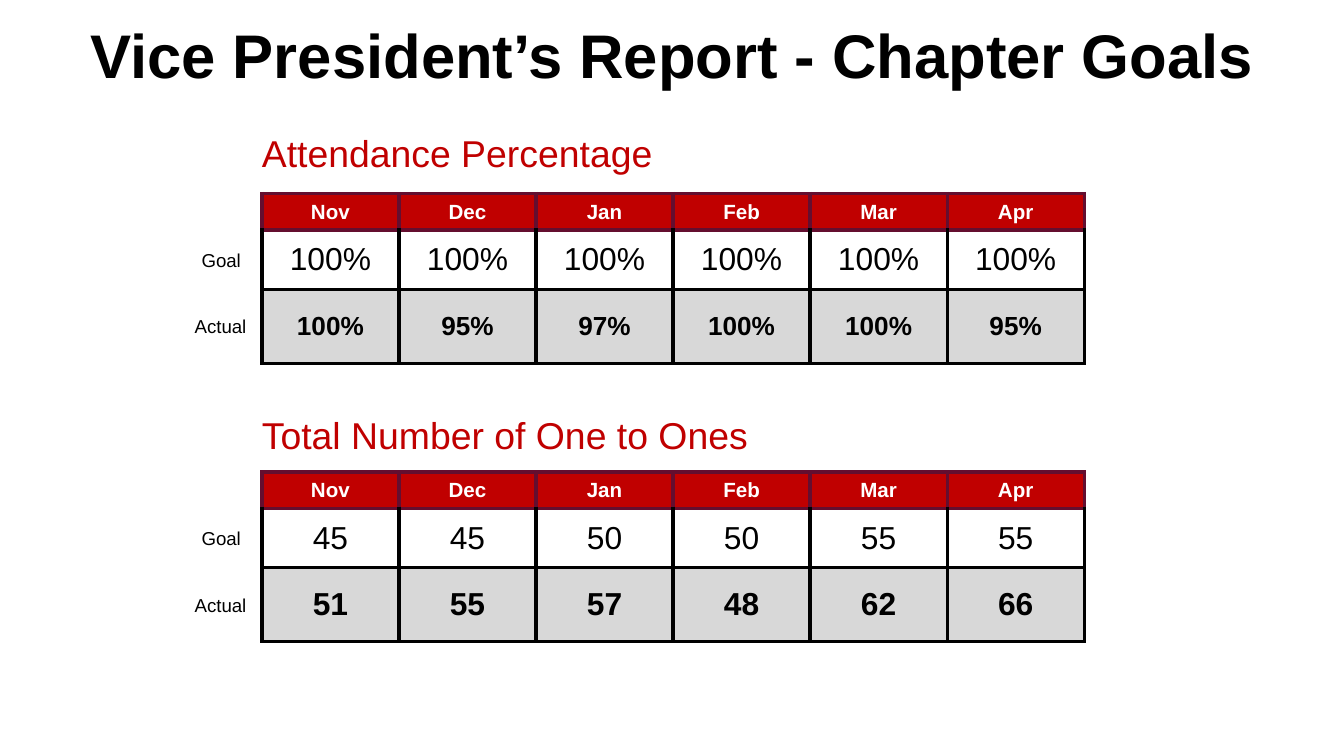
from dataclasses import dataclass

from lxml import etree
from pptx import Presentation
from pptx.dml.color import RGBColor
from pptx.enum.text import MSO_ANCHOR, MSO_AUTO_SIZE, PP_ALIGN
from pptx.oxml.ns import qn
from pptx.util import Cm, Pt

MIDDLE = MSO_ANCHOR.MIDDLE
NO_FIT = MSO_AUTO_SIZE.NONE
LEFT = PP_ALIGN.LEFT
CENTER = PP_ALIGN.CENTER
SIDES = ("left", "top", "right", "bottom")


@dataclass(frozen=True)
class Theme:
    font: str = "Arial"
    black: str = "000000"
    white: str = "FFFFFF"
    red: str = "C00000"
    wine: str = "640E2F"
    gray: str = "D8D8D8"
    title: int = 33
    heading: int = 20
    goal: int = 17
    header: int = 11
    label: int = 10
    border: int = 2


THEME = Theme()
TABLE_LEFT = 4.95
COLUMN_WIDTH = 2.59
ROW_HEIGHTS = (0.69, 1.12, 1.4)
LABEL_RIGHT = 4.7
LABEL_HEIGHT = 0.41
LABELS = (("Goal", 0.89), ("Actual", 1.02))
MONTHS = ("Nov", "Dec", "Jan", "Feb", "Mar", "Apr")

SECTIONS = (
    {
        "heading": "Attendance Percentage",
        "heading_top": 2.46,
        "table_top": 3.66,
        "goals": ("100%",) * 6,
        "actuals": ("100%", "95%", "97%", "100%", "100%", "95%"),
        "actual_size": 14,
    },
    {
        "heading": "Total Number of One to Ones",
        "heading_top": 7.78,
        "table_top": 8.92,
        "goals": ("45", "45", "50", "50", "55", "55"),
        "actuals": ("51", "55", "57", "48", "62", "66"),
        "actual_size": 17,
    },
)


def apply(target, values):
    for name, value in values.items():
        setattr(target, name, value)


class GoalsPage:
    def __init__(self, page, theme):
        self.page = page
        self.theme = theme

    def add_span(self, frame, text, size, color, bold=False, align=LEFT):
        para = frame.paragraphs[0]
        para.alignment = align
        span = para.add_run()
        span.text = text
        apply(span.font, {"name": self.theme.font, "size": Pt(size), "bold": bold})
        span.font.color.rgb = RGBColor.from_string(color)
        return para

    def format_frame(self, frame, inset_x=0, inset_y=0):
        apply(frame, {
            "word_wrap": True,
            "auto_size": NO_FIT,
            "vertical_anchor": MIDDLE,
            "margin_left": Cm(inset_x),
            "margin_right": Cm(inset_x),
            "margin_top": Cm(inset_y),
            "margin_bottom": Cm(inset_y),
        })

    def title(self, text):
        box = self.page.shapes.title
        apply(box, {"left": Cm(1.07), "top": Cm(0), "width": Cm(23.27), "height": Cm(2.21)})
        self.format_frame(box.text_frame, 0.18, 0.1)
        para = self.add_span(box.text_frame, text, self.theme.title, self.theme.black, True, CENTER)
        para.line_spacing = 0.9

    def text(self, text, left, top, width, height, size, color):
        box = self.page.shapes.add_textbox(Cm(left), Cm(top), Cm(width), Cm(height))
        self.format_frame(box.text_frame)
        self.add_span(box.text_frame, text, size, color)

    def borders(self, cell, colors):
        properties = cell._tc.get_or_add_tcPr()
        for side, color in zip("LTRB", colors):
            properties.append(self.border_line(side, color))
        for side in "BTRL":
            properties.insert(0, properties.find(qn(f"a:ln{side}")))

    def border_line(self, side, color):
        line = etree.Element(qn(f"a:ln{side}"), w=str(Pt(self.theme.border)))
        fill = etree.SubElement(line, qn("a:solidFill"))
        etree.SubElement(fill, qn("a:srgbClr"), val=color)
        return line

    def table(self, top, rows, styles):
        columns = len(rows[0])
        table = self.page.shapes.add_table(
            len(rows), columns, Cm(TABLE_LEFT), Cm(top),
            Cm(COLUMN_WIDTH * columns), Cm(sum(ROW_HEIGHTS)),
        ).table
        table.horz_banding = False
        for column in table.columns:
            column.width = Cm(COLUMN_WIDTH)
        for row, height, texts, style in zip(table.rows, ROW_HEIGHTS, rows, styles):
            row.height = Cm(height)
            for cell, text in zip(row.cells, texts):
                apply(cell, {f"margin_{side}": Cm(0.08) for side in SIDES})
                cell.vertical_anchor = MIDDLE
                self.borders(cell, style["borders"])
                cell.fill.solid()
                cell.fill.fore_color.rgb = RGBColor.from_string(style["fill"])
                self.add_span(cell.text_frame, text, align=CENTER, **style["text"])

    def section(self, heading, heading_top, table_top, goals, actuals, actual_size):
        theme = self.theme
        self.text(heading, TABLE_LEFT, heading_top, 15.34, 0.86, theme.heading, theme.red)
        styles = (
            {
                "fill": theme.red,
                "borders": (theme.wine,) * 4,
                "text": {"size": theme.header, "color": theme.white, "bold": True},
            },
            {
                "fill": theme.white,
                "borders": (theme.black, theme.wine, theme.black, theme.black),
                "text": {"size": theme.goal, "color": theme.black},
            },
            {
                "fill": theme.gray,
                "borders": (theme.black,) * 4,
                "text": {"size": actual_size, "color": theme.black, "bold": True},
            },
        )
        self.table(table_top, (MONTHS, goals, actuals), styles)
        row_top = table_top + ROW_HEIGHTS[0]
        for (label, width), height in zip(LABELS, ROW_HEIGHTS[1:]):
            label_top = row_top + (height - LABEL_HEIGHT) / 2
            self.text(label, LABEL_RIGHT - width, label_top, width, LABEL_HEIGHT,
                      theme.label, theme.black)
            row_top += height


def main():
    deck = Presentation()
    apply(deck, {"slide_width": Cm(25.4), "slide_height": Cm(14.29)})
    page = GoalsPage(deck.slides.add_slide(deck.slide_layouts[5]), THEME)
    page.title("Vice President’s Report - Chapter Goals")
    for section in SECTIONS:
        page.section(**section)
    deck.save("out.pptx")


if __name__ == "__main__":
    main()
